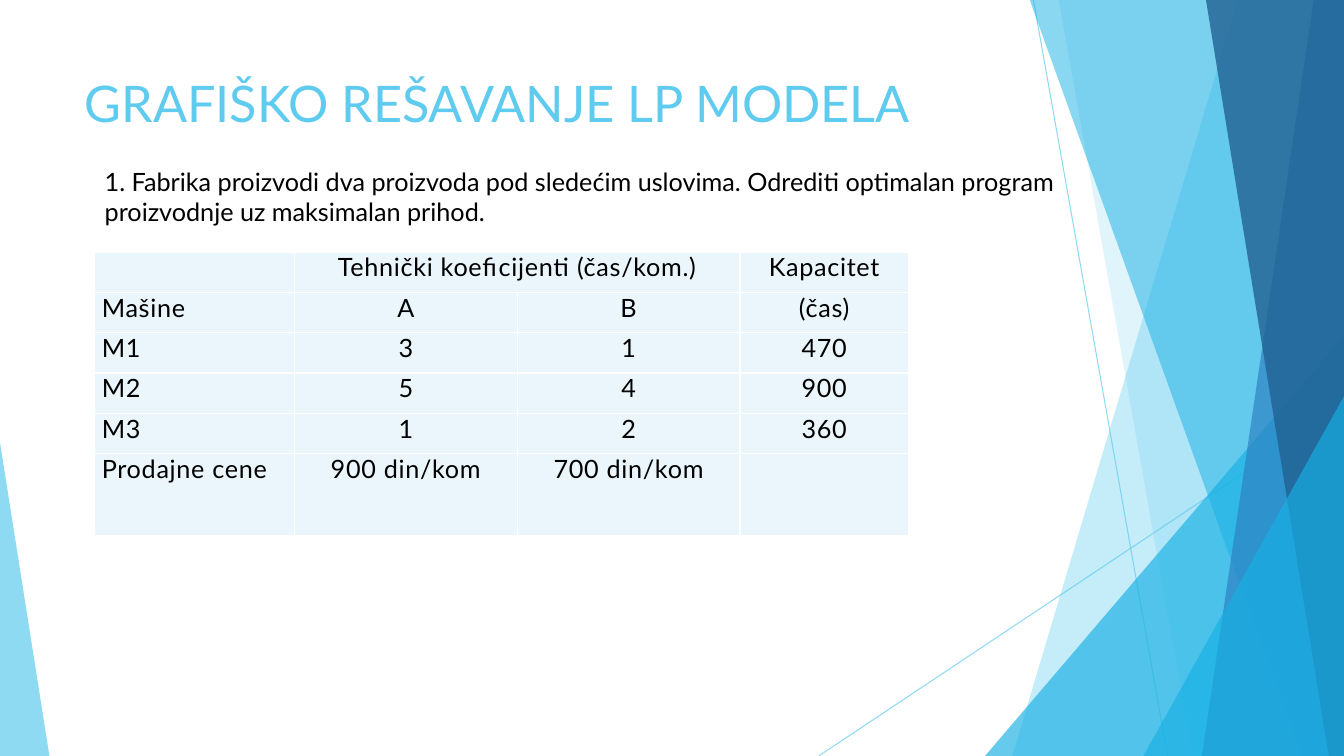
"""Builds a slide on solving a linear programming model graphically."""
from lxml import etree
from pptx import Presentation
from pptx.dml.color import RGBColor
from pptx.enum.shapes import MSO_CONNECTOR, MSO_SHAPE
from pptx.enum.text import MSO_ANCHOR, PP_ALIGN
from pptx.oxml import parse_xml
from pptx.oxml.ns import nsdecls, qn
from pptx.util import Inches, Pt

STRAIGHT = MSO_CONNECTOR.STRAIGHT
TRIANGLE = MSO_SHAPE.ISOSCELES_TRIANGLE
TOP = MSO_ANCHOR.TOP
LEFT, CENTER, JUSTIFY = PP_ALIGN.LEFT, PP_ALIGN.CENTER, PP_ALIGN.JUSTIFY
SKY = RGBColor(0x5F, 0xCB, 0xEF)
CYAN = RGBColor(0x17, 0xB0, 0xE4)
BLUE = RGBColor(0x2E, 0x83, 0xC3)
NAVY = RGBColor(0x22, 0x62, 0x92)
PALE = RGBColor(0xEA, 0xF6, 0xFC)
BLACK = RGBColor(0, 0, 0)
FONT = "Lato"
WIDTH, HEIGHT = 13.33, 7.5


def set_alpha(properties, percent):
    color = next(properties.iter(qn("a:srgbClr")))
    etree.SubElement(color, qn("a:alpha")).set("val", str(percent * 1000))


def add_text(para, text, size, color):
    span = para.add_run()
    span.text = text
    span.font.name = FONT
    span.font.size = Pt(size)
    span.font.color.rgb = color
    return span


deck = Presentation()
deck.slide_width, deck.slide_height = Inches(WIDTH), Inches(HEIGHT)
page = deck.slides.add_slide(deck.slide_layouts[5])
shapes = page.shapes

for x1, y1, x2, y2 in [(10.25, 0, 11.58, HEIGHT), (WIDTH, 4.03, 8.12, HEIGHT)]:
    ray = shapes.add_connector(STRAIGHT, Inches(x1), Inches(y1), Inches(x2), Inches(y2))
    ray.line.color.rgb = SKY
    ray.line.width = Pt(0.75)
    properties = ray.element.spPr
    set_alpha(properties, 70)
    etree.SubElement(properties, qn("a:effectLst"))

# (kind, position, colour, opacity)
decor = [
    ("band", (12.28, 10.04), SKY, 36),
    ("band", (10.5, 11.83), SKY, 20),
    ("triangle", (9.77, 3.33, 3.56, 1), CYAN, 66),
    ("band", (10.21, 12.91), CYAN, 50),
    ("band", (13.03, 11.92), BLUE, 70),
    ("band", (11.96, 13.18), NAVY, 80),
    ("triangle", (11.34, 3.93, 1.99, 1), CYAN, 66),
    ("triangle", (0, 4.39, 0.49, 0), SKY, 70),
]
for kind, place, color, opacity in decor:
    if kind == "band":
        top_x, bottom_x = place
        outline = shapes.build_freeform(Inches(top_x), Inches(-0.01))
        corners = [(WIDTH, -0.01), (WIDTH, HEIGHT), (bottom_x, HEIGHT)]
        outline.add_line_segments([(Inches(x), Inches(y)) for x, y in corners], close=True)
        facet = outline.convert_to_shape()
    else:
        left, top, width, apex = place
        facet = shapes.add_shape(TRIANGLE, Inches(left), Inches(top),
                                 Inches(width), Inches(HEIGHT - top))
        facet.adjustments[0] = apex
    facet.shadow.inherit = False
    facet.fill.solid()
    facet.fill.fore_color.rgb = color
    facet.line.fill.background()
    set_alpha(facet.element.spPr, opacity)

title = shapes.title
title.element.getparent().append(title.element)
title.left, title.top = Inches(0.74), Inches(0.67)
title.width, title.height = Inches(9.4), Inches(1.44)
title.text_frame.vertical_anchor = TOP
title.text_frame.word_wrap = True
heading = title.text_frame.paragraphs[0]
heading.alignment = LEFT
add_text(heading, "GRAFIŠKO REŠAVANJE LP MODELA", 36, SKY)

rows = [
    ["", "Tehnički koeficijenti (čas/kom.)", "", "Kapacitet"],
    ["Mašine", "A", "B", "(čas)"],
    ["M1", "3", "1", "470"],
    ["M2", "5", "4", "900"],
    ["M3", "1", "2", "360"],
    ["Prodajne cene", "900 din/kom", "700 din/kom", ""],
]
table = shapes.add_table(len(rows), 4, Inches(0.94), Inches(2.5),
                         Inches(8.07), Inches(2.82)).table
for column, width in zip(table.columns, [1.98, 2.21, 2.21, 1.67]):
    column.width = Inches(width)
for row, height in zip(table.rows, [0.4] * 5 + [0.81]):
    row.height = Inches(height)
table.cell(0, 1).merge(table.cell(0, 2))

for r, values in enumerate(rows):
    for c, value in enumerate(values):
        cell = table.cell(r, c)
        cell.margin_left = cell.margin_right = Inches(0.07)
        cell.margin_top = cell.margin_bottom = 0
        cell_properties = cell._tc.get_or_add_tcPr()
        for side in ("lnL", "lnR", "lnT", "lnB"):
            cell_properties.append(parse_xml(
                f'<a:{side} {nsdecls("a")} w="12700"><a:solidFill>'
                f'<a:srgbClr val="FFFFFF"/></a:solidFill></a:{side}>'))
        cell.fill.solid()
        cell.fill.fore_color.rgb = PALE
        para = cell.text_frame.paragraphs[0]
        para.alignment = CENTER if c else JUSTIFY
        if value:
            span = add_text(para, value, 18, BLACK)
            span.font.bold = False
            span.font._element.set("spc", "50")

box = shapes.add_textbox(Inches(0.94), Inches(1.6), Inches(9.86), Inches(0.71))
box.text_frame.word_wrap = True
add_text(box.text_frame.paragraphs[0],
         "1. Fabrika proizvodi dva proizvoda pod sledećim uslovima. "
         "Odrediti optimalan program proizvodnje uz maksimalan prihod.", 18, BLACK)

deck.save("out.pptx")
